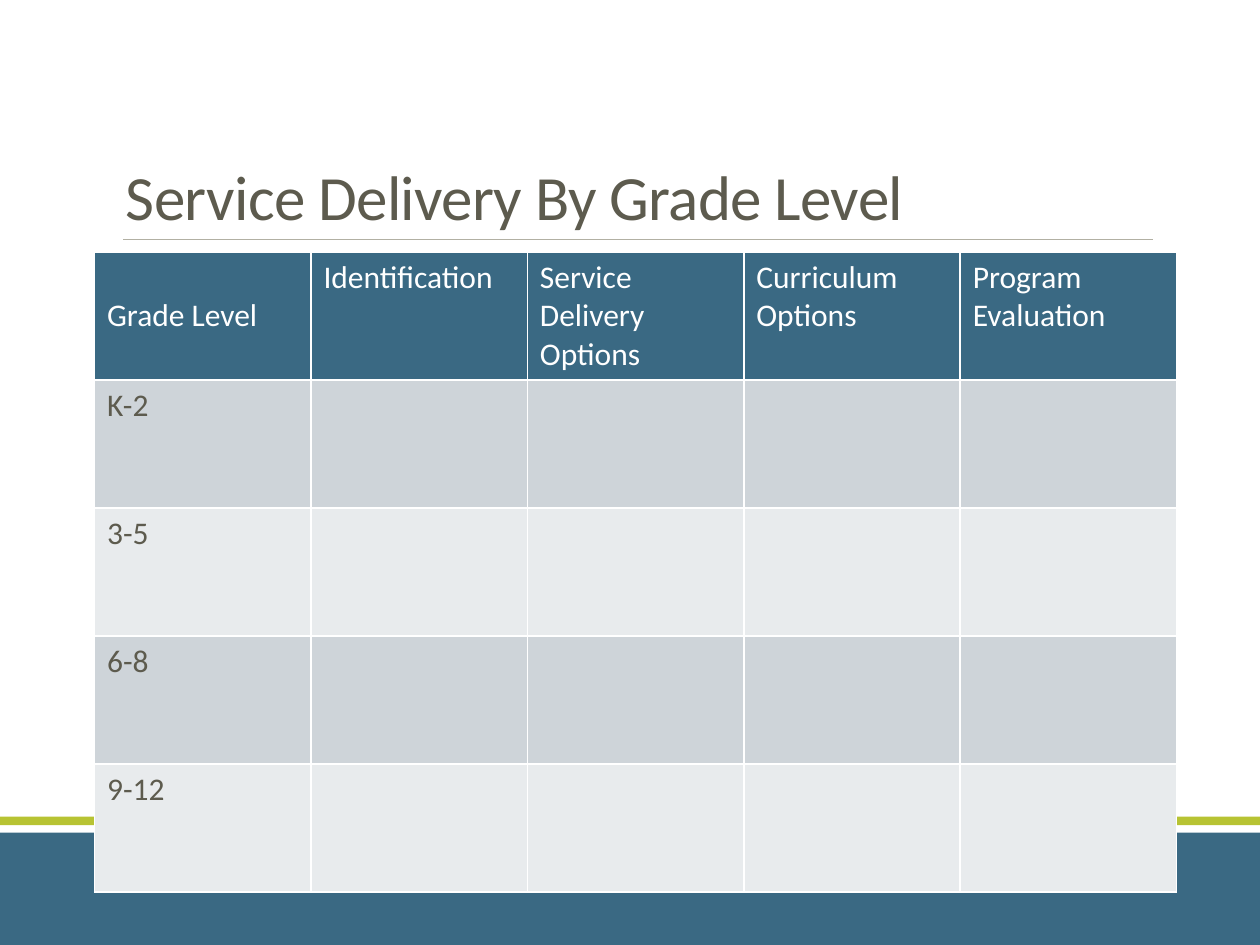
from lxml.etree import SubElement
from pptx import Presentation
from pptx.dml.color import RGBColor
from pptx.enum.shapes import MSO_CONNECTOR, MSO_SHAPE
from pptx.enum.text import MSO_ANCHOR
from pptx.oxml.ns import qn
from pptx.util import Pt

WHITE = RGBColor(0xFF, 0xFF, 0xFF)
BLUE = RGBColor(0x3A, 0x69, 0x83)
LIME = RGBColor(0xB7, 0xC3, 0x33)
BROWN = RGBColor(0x5D, 0x5B, 0x4E)
RULE = RGBColor(0xB2, 0xB0, 0xA3)
BANDS = [RGBColor(0xCE, 0xD4, 0xD9), RGBColor(0xE8, 0xEB, 0xED)]

HEADERS = ["Grade Level", "Identification", "Service Delivery Options",
           "Curriculum Options", "Program Evaluation"]
GRADES = ["K-2", "3-5", "6-8", "9-12"]


def set_font(font, color, **values):
    for name, value in {"name": "Calibri", **values}.items():
        setattr(font, name, value)
    font.color.rgb = color


def add_bar(s, x, y, w, h, color):
    sp = s.shapes.add_shape(MSO_SHAPE.RECTANGLE, Pt(x), Pt(y), Pt(w), Pt(h))
    sp.shadow.inherit = False
    sp.fill.solid()
    sp.fill.fore_color.rgb = color
    sp.line.fill.background()


def add_footer(s, x, y, w, h):
    add_bar(s, x, y, w, 5, LIME)
    add_bar(s, x, y + 9.2, w, h - 9.2, BLUE)


def add_title(s, x, y, w, h, text):
    line = s.shapes.add_connector(MSO_CONNECTOR.STRAIGHT, Pt(x + 5.6), Pt(y + h),
                                  Pt(x + w), Pt(y + h))
    line.line.color.rgb = RULE
    line.line.width = Pt(0.5)
    SubElement(line._element.spPr, qn("a:effectLst"))
    tf = s.shapes.add_textbox(Pt(x), Pt(y), Pt(w), Pt(h)).text_frame
    for name, value in {"word_wrap": True, "vertical_anchor": MSO_ANCHOR.BOTTOM}.items():
        setattr(tf, name, value)
    p = tf.paragraphs[0]
    p.line_spacing = 0.85
    r = p.add_run()
    r.text = text
    set_font(r.font, BROWN, size=Pt(36))
    r.font._element.set("spc", "-40")


def set_borders(cell):
    tcPr = cell._tc.get_or_add_tcPr()
    for i, side in enumerate(("lnL", "lnR", "lnT", "lnB")):
        ln = tcPr.makeelement(qn(f"a:{side}"), {"w": str(Pt(1))})
        fill = SubElement(ln, qn("a:solidFill"))
        SubElement(fill, qn("a:srgbClr"), val=str(WHITE))
        tcPr.insert(i, ln)


def fill_cell(cell, text, fill, color):
    cell.fill.solid()
    cell.fill.fore_color.rgb = fill
    set_borders(cell)
    p = cell.text_frame.paragraphs[0]
    set_font(p.font, color, size=Pt(18))
    if text:
        r = p.add_run()
        r.text = text
        set_font(r.font, color, size=Pt(18))


def add_grade_table(s, x, y, w, h):
    rows = [HEADERS] + [[g] + [""] * (len(HEADERS) - 1) for g in GRADES]
    table = s.shapes.add_table(len(rows), len(HEADERS), Pt(x), Pt(y), Pt(w), Pt(h)).table
    for col in table.columns:
        col.width = Pt(w / len(HEADERS))
    for i, values in enumerate(rows):
        table.rows[i].height = Pt(h / len(rows))
        fill, color = (BANDS[(i - 1) % 2], BROWN) if i else (BLUE, WHITE)
        for j, text in enumerate(values):
            fill_cell(table.cell(i, j), text, fill, color)
    table.cell(0, 0).vertical_anchor = MSO_ANCHOR.MIDDLE


def main():
    prs = Presentation()
    prs.slide_width, prs.slide_height = Pt(720), Pt(540)
    s = prs.slides.add_slide(prs.slide_layouts[6])
    add_footer(s, 0, 466.6, 720, 73.4)
    add_title(s, 64.8, 22.4, 594, 114.4, "Service Delivery By Grade Level")
    add_grade_table(s, 54, 144, 618.5, 365.75)
    prs.save("out.pptx")


if __name__ == "__main__":
    main()
